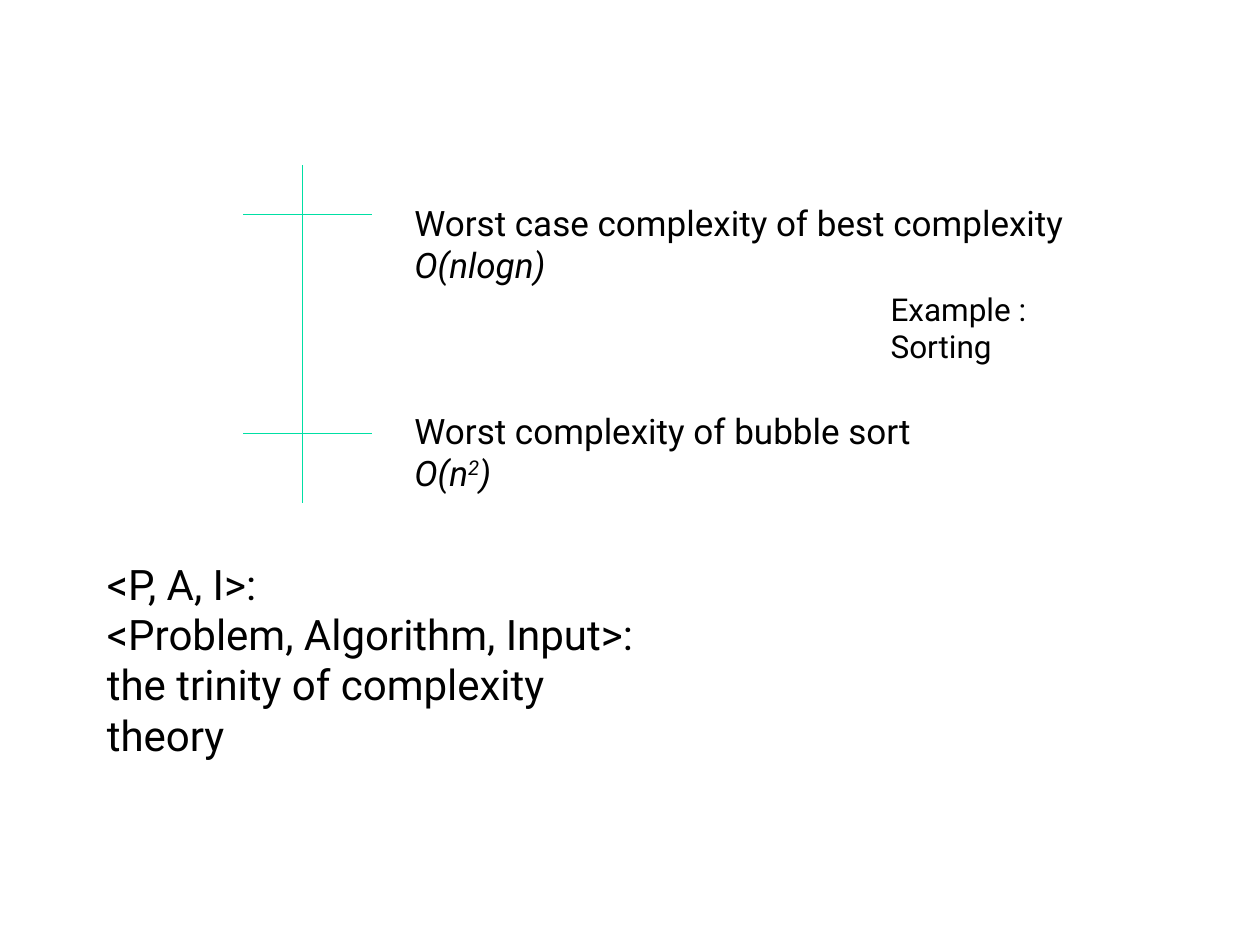
"""Build a slide on the worst case complexity of sorting."""
from lxml import etree
from pptx import Presentation
from pptx import util as u
from pptx.dml.color import RGBColor
from pptx.enum import shapes, text
from pptx.oxml.ns import qn


def paint(color, code):
    color.rgb = RGBColor.from_string(code)


deck = Presentation()
deck.slide_width, deck.slide_height = u.Inches(10), u.Inches(7.5)
slide = deck.slides.add_slide(deck.slide_layouts[6])

axis = (2.4, 1.31, 2.4, 3.99)
ticks = [(1.93, y, 2.95, y) for y in (1.7, 3.44)]
for ends in [axis, *ticks]:
    line = slide.shapes.add_connector(
        shapes.MSO_CONNECTOR.STRAIGHT, *map(u.Inches, ends))
    line.line.width = u.Pt(0.75)
    paint(line.line.color, "00DFA4")
    etree.SubElement(line._element.spPr, qn("a:effectLst"))

plain = {"name": "Roboto", "italic": False}
slant = {**plain, "italic": True}
labels = [
    ((3.19, 1.55, 5.97, 0.44), 20, [[
        ("Worst case complexity of best complexity ", plain, 0),
        ("O(nlogn)", slant, 0)]]),
    ((3.19, 3.2, 4.51, 0.44), 20, [[
        ("Worst complexity of bubble sort ", plain, 0),
        ("O(n", slant, 0), ("2", slant, 30), (")", slant, 0)]]),
    ((6.97, 2.25, 2.04, 0.4), 18, [[("Example : Sorting", plain, 0)]]),
    ((0.75, 4.38, 4.46, 1.31), 24, [
        [("<P, A, I>:", plain, 0)],
        [("<Problem, Algorithm, Input>:", plain, 0)],
        [("the trinity of complexity theory", plain, 0)]]),
]
for place, size, rows in labels:
    frame = slide.shapes.add_textbox(*map(u.Inches, place)).text_frame
    frame.word_wrap = True
    frame.auto_size = text.MSO_AUTO_SIZE.SHAPE_TO_FIT_TEXT
    for i, row in enumerate(rows):
        para = frame.add_paragraph() if i else frame.paragraphs[0]
        for words, style, rise in row:
            run = para.add_run()
            run.text = words
            for key, value in {**style, "size": u.Pt(size)}.items():
                setattr(run.font, key, value)
            paint(run.font.color, "000000")
            if rise:
                run._r.get_or_add_rPr().set("baseline", str(rise * 1000))

deck.save("out.pptx")
